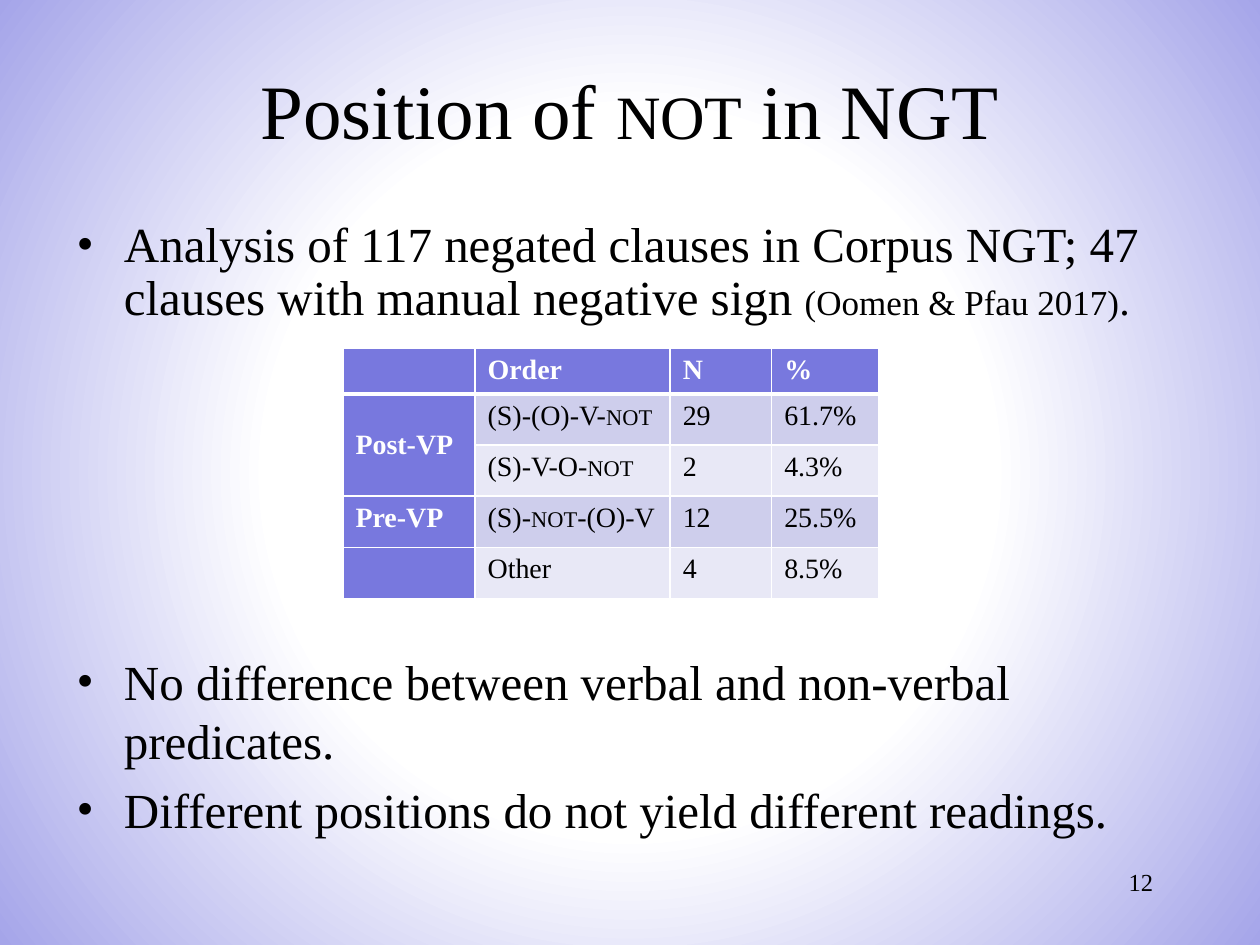
from lxml import etree
from pptx import Presentation
from pptx.dml.color import RGBColor
from pptx.enum import text as enum_text
from pptx.oxml import ns, parse_xml
from pptx.util import Pt

BLACK = RGBColor(0x00, 0x00, 0x00)
WHITE = RGBColor(0xFF, 0xFF, 0xFF)
VIOLET = RGBColor(0x78, 0x78, 0xDE)
BAND_DARK = RGBColor(0xCE, 0xCE, 0xEC)
BAND_LIGHT = RGBColor(0xE8, 0xE8, 0xF6)
EDGE = RGBColor(0xA5, 0xA5, 0xE9)
FONT = "Times New Roman"
NAMESPACE = ns.nsdecls("a", "p")


def write(paragraph, text, size, color=BLACK, bold=False):
    """Add text to the paragraph; parts between bars are set in small caps."""
    paragraph._p.get_or_add_endParaRPr().set("sz", str(size * 100))
    for index, part in enumerate(text.split("|")):
        if not part:
            continue
        run = paragraph.add_run()
        run.text = part
        run.font.name = FONT
        run.font.size = Pt(size)
        run.font.bold = bold
        run.font.color.rgb = color
        if index % 2:
            run.font._element.set("cap", "small")


def add_border(cell, side, width):
    cell._tc.get_or_add_tcPr().append(parse_xml(
        f'<a:ln{side} {NAMESPACE} w="{Pt(width)}"><a:solidFill>'
        f'<a:srgbClr val="{WHITE}"/></a:solidFill></a:ln{side}>'))


presentation = Presentation()
presentation.slide_width, presentation.slide_height = Pt(720), Pt(540)
slide = presentation.slides.add_slide(presentation.slide_layouts[5])

# Background: white centre fading to violet
stops = "".join(
    f'<a:gs pos="{position * 1000}"><a:srgbClr val="{color}"/></a:gs>'
    for position, color in ((0, WHITE), (46, WHITE), (100, EDGE)))
slide._element.cSld.insert(0, parse_xml(
    f'<p:bg {NAMESPACE}><p:bgPr><a:gradFill rotWithShape="1"><a:gsLst>{stops}</a:gsLst>'
    '<a:path path="circle"><a:fillToRect l="50000" t="50000" r="50000" b="50000"/></a:path>'
    '</a:gradFill><a:effectLst/></p:bgPr></p:bg>'))

# Title
title = slide.shapes.title
title.left, title.top, title.width, title.height = Pt(54), Pt(26), Pt(612), Pt(72)
title.text_frame.vertical_anchor = enum_text.MSO_ANCHOR.MIDDLE
title_paragraph = title.text_frame.paragraphs[0]
title_paragraph.alignment = enum_text.PP_ALIGN.CENTER
write(title_paragraph, "Position of |not| in NGT", 44)

# Bullets, with room for the table after the first
bullets = [
    ([("Analysis of 117 negated clauses in Corpus NGT; 47 clauses with manual negative sign ", 28),
      ("(Oomen & Pfau 2017)", 20), (".", 24)], 0.9, 0),
    ([("No difference between verbal and non-verbal predicates.", 28)], 1.0, 186),
    ([("Different positions do not yield different readings.", 28)], 1.0, 5.6),
]
body = slide.shapes.add_textbox(Pt(36.75), Pt(122.5), Pt(652), Pt(391)).text_frame
body.word_wrap = True
for index, (parts, line_spacing, space_before) in enumerate(bullets):
    paragraph = body.add_paragraph() if index else body.paragraphs[0]
    properties = paragraph._p.get_or_add_pPr()
    properties.set("marL", str(Pt(27)))
    properties.set("indent", str(Pt(-27)))
    etree.SubElement(properties, ns.qn("a:buFont"), typeface=FONT)
    etree.SubElement(properties, ns.qn("a:buChar"), char="•")
    paragraph.line_spacing = line_spacing
    paragraph.space_before = Pt(space_before)
    for text, size in parts:
        write(paragraph, text, size)

# Table of word orders
rows = [
    ("", "Order", "N", "%"),
    ("Post-VP", "(S)-(O)-V-|not|", "29", "61.7%"),
    ("", "(S)-V-O-|not|", "2", "4.3%"),
    ("Pre-VP", "(S)-|not|-(O)-V", "12", "25.5%"),
    ("", "Other", "4", "8.5%"),
]
column_widths = (75.5, 111.5, 58, 61)
row_heights = (24.6, 29.2, 29.2, 29.2, 29.2)
table = slide.shapes.add_table(len(rows), len(column_widths), Pt(196), Pt(198.75),
                               Pt(sum(column_widths)), Pt(sum(row_heights))).table
table.first_row = table.horz_banding = False
for column, width in zip(table.columns, column_widths):
    column.width = Pt(width)
for row_index, values in enumerate(rows):
    table.rows[row_index].height = Pt(row_heights[row_index])
    for column_index, value in enumerate(values):
        cell = table.cell(row_index, column_index)
        is_header = row_index == 0 or column_index == 0
        for side in "LRTB":
            under_header = (row_index, side) in ((0, "B"), (1, "T"))
            add_border(cell, side, 3 if under_header else 1)
        cell.fill.solid()
        band = BAND_DARK if row_index % 2 else BAND_LIGHT
        cell.fill.fore_color.rgb = VIOLET if is_header else band
        write(cell.text_frame.paragraphs[0], value, 16,
              color=WHITE if is_header else BLACK, bold=is_header)
post_vp = table.cell(1, 0)
post_vp.merge(table.cell(2, 0))
post_vp.vertical_anchor = enum_text.MSO_ANCHOR.MIDDLE

# Slide number
number = slide.shapes.add_textbox(Pt(516), Pt(492), Pt(150), Pt(36)).text_frame
number.word_wrap = True
number.paragraphs[0].alignment = enum_text.PP_ALIGN.RIGHT
write(number.paragraphs[0], "12", 14)

presentation.save("out.pptx")
